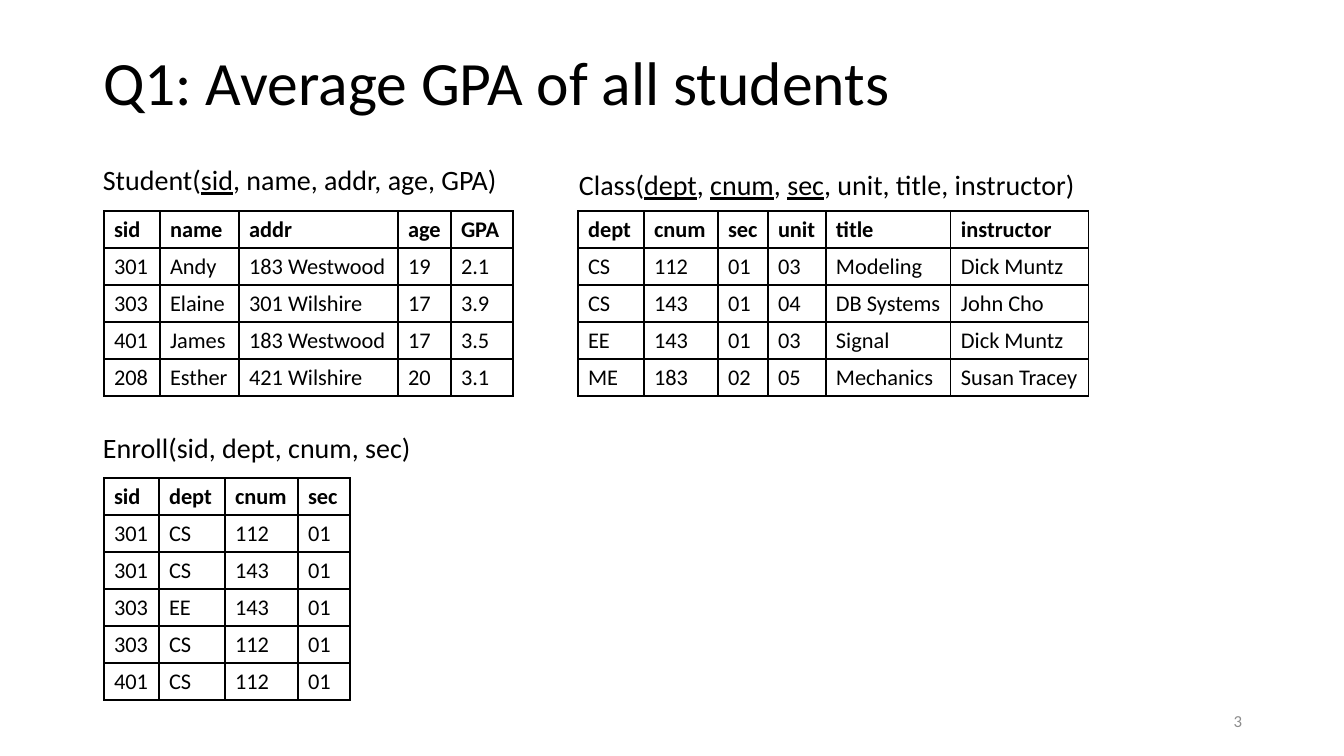
"""Build the slide that asks for the average GPA over three relations."""
from lxml import etree
from pptx import Presentation
from pptx.dml.color import RGBColor
from pptx.enum.text import MSO_ANCHOR, MSO_AUTO_SIZE, PP_ALIGN
from pptx.oxml.ns import qn
from pptx.util import Pt

PX_PER_INCH = 100.8
TITLE_ONLY = 5
LEFT, RIGHT = PP_ALIGN.LEFT, PP_ALIGN.RIGHT
TOP, MIDDLE = MSO_ANCHOR.TOP, MSO_ANCHOR.MIDDLE
NO_FIT = MSO_AUTO_SIZE.NONE
BLACK, GREY = "000000", "8C8C8C"


def px(length):
    """Turn pixels into EMU."""
    return round(length * 914400 / PX_PER_INCH)


def colour(code):
    """Turn a hex string into a colour."""
    return RGBColor.from_string(code)


class RelationSlide:
    """Hold the style and the slide, and draw its elements."""

    font = "Calibri"
    row_height = 37

    def __init__(self, slide):
        """Keep the slide to draw on."""
        self.slide = slide

    def add_run(self, paragraph, text, size, ink=BLACK, bold=False, underline=False):
        """Add one formatted run to a paragraph."""
        run = paragraph.add_run()
        run.text = text
        run.font.name = self.font
        run.font.size = Pt(size)
        run.font.bold = bold
        run.font.underline = underline
        run.font.color.rgb = colour(ink)

    def title(self, text, left, top, width, height):
        """Place and fill the title placeholder."""
        heading = self.slide.shapes.title
        heading.left, heading.top = px(left), px(top)
        heading.width, heading.height = px(width), px(height)
        frame = heading.text_frame
        frame.auto_size = NO_FIT
        frame.vertical_anchor = MIDDLE
        paragraph = frame.paragraphs[0]
        paragraph.alignment = LEFT
        paragraph.line_spacing = 0.9
        self.add_run(paragraph, text, 44)

    def text(self, parts, left, top, width, height, size=20, ink=BLACK,
             align=LEFT, anchor=TOP):
        """Add a text box from (text, underlined) parts."""
        box = self.slide.shapes.add_textbox(px(left), px(top), px(width), px(height))
        frame = box.text_frame
        frame.word_wrap = True
        frame.vertical_anchor = anchor
        paragraph = frame.paragraphs[0]
        paragraph.alignment = align
        for part, underlined in parts:
            self.add_run(paragraph, part, size, ink, underline=underlined)

    def border(self, cell):
        """Draw a thin black line on each side of a cell."""
        properties = cell._tc.get_or_add_tcPr()
        for side in ("a:lnL", "a:lnR", "a:lnT", "a:lnB"):
            line = etree.SubElement(properties, qn(side), w=str(Pt(1)))
            fill = etree.SubElement(line, qn("a:solidFill"))
            etree.SubElement(fill, qn("a:srgbClr"), val=BLACK)

    def table(self, rows, widths, left, top):
        """Add a ruled table with a bold header row."""
        grid = self.slide.shapes.add_table(
            len(rows), len(widths), px(left), px(top),
            px(sum(widths)), px(self.row_height * len(rows))).table
        grid.first_row = grid.horz_banding = False
        for column, width in zip(grid.columns, widths):
            column.width = px(width)
        for index, values in enumerate(rows):
            grid.rows[index].height = px(self.row_height)
            for position, value in enumerate(values):
                cell = grid.cell(index, position)
                self.border(cell)
                cell.fill.background()
                self.add_run(cell.text_frame.paragraphs[0], value, 16, bold=index == 0)


STUDENTS = [
    ("sid", "name", "addr", "age", "GPA"),
    ("301", "Andy", "183 Westwood", "19", "2.1"),
    ("303", "Elaine", "301 Wilshire", "17", "3.9"),
    ("401", "James", "183 Westwood", "17", "3.5"),
    ("208", "Esther", "421 Wilshire", "20", "3.1"),
]
CLASSES = [
    ("dept", "cnum", "sec", "unit", "title", "instructor"),
    ("CS", "112", "01", "03", "Modeling", "Dick Muntz"),
    ("CS", "143", "01", "04", "DB Systems", "John Cho"),
    ("EE", "143", "01", "03", "Signal", "Dick Muntz"),
    ("ME", "183", "02", "05", "Mechanics", "Susan Tracey"),
]
ENROLLMENTS = [
    ("sid", "dept", "cnum", "sec"),
    ("301", "CS", "112", "01"),
    ("301", "CS", "143", "01"),
    ("303", "EE", "143", "01"),
    ("303", "CS", "112", "01"),
    ("401", "CS", "112", "01"),
]
STUDENT_SCHEMA = [("Student(", False), ("sid", True), (", name, addr, age, GPA)", False)]
CLASS_SCHEMA = [
    ("Class(", False), ("dept", True), (", ", False), ("cnum", True),
    (", ", False), ("sec", True), (", unit, title, instructor)", False),
]
ENROLL_SCHEMA = [("Enroll(sid, dept, cnum, sec)", False)]


def main():
    """Build and save the presentation."""
    deck = Presentation()
    deck.slide_width, deck.slide_height = px(1344), px(756)
    page = RelationSlide(deck.slides.add_slide(deck.slide_layouts[TITLE_ONLY]))
    page.title("Q1: Average GPA of all students", 93, 40, 1159, 92)
    page.text(STUDENT_SCHEMA, 93, 158, 419, 43)
    page.text(CLASS_SCHEMA, 569, 163, 606, 43)
    page.text(ENROLL_SCHEMA, 93, 426, 405, 43)
    page.table(ENROLLMENTS, (55, 66, 73, 52), 104, 478)
    page.table(STUDENTS, (56, 79, 159, 53, 62), 104, 211)
    page.table(CLASSES, (66, 74, 50, 58, 125, 138), 578, 211)
    page.text([("3", False)], 950, 701, 302, 40, 12, GREY, RIGHT, MIDDLE)
    deck.save("out.pptx")


if __name__ == "__main__":
    main()
